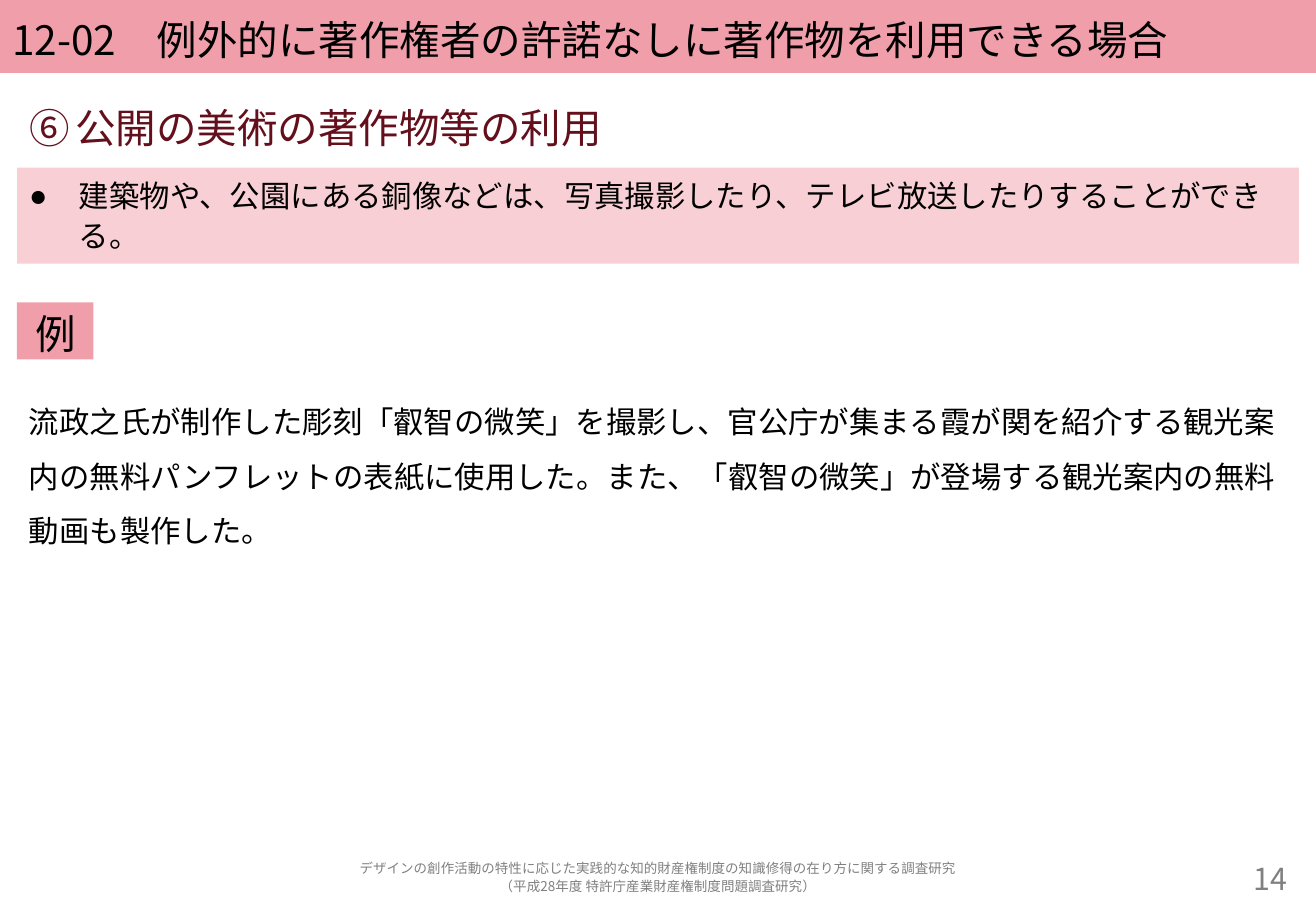
from lxml.etree import SubElement
from pptx import Presentation
from pptx.dml.color import RGBColor
from pptx.enum.shapes import MSO_SHAPE
from pptx.enum.text import MSO_ANCHOR, MSO_AUTO_SIZE, PP_ALIGN
from pptx.oxml.ns import qn
from pptx.util import Inches, Pt

FONT = "Noto Sans CJK JP"
HUES = {
    "rose": "F09FAA",
    "pale": "F8CFD5",
    "wine": "64101C",
    "gray": "808080",
    "black": "000000",
}
LEFT, WIDE = 0.14, 10.55


def write(shape, text, box, size=18, hue="black", fill=None, align=PP_ALIGN.LEFT,
          anchor=MSO_ANCHOR.MIDDLE, lead=1.1, hang=0, mark=None):
    shape.left, shape.top, shape.width, shape.height = [Inches(n) for n in box]
    if fill:
        shape.fill.solid()
        shape.fill.fore_color.rgb = RGBColor.from_string(HUES[fill])
        shape.line.fill.background()
    frame = shape.text_frame
    frame.text = text
    frame.word_wrap = True
    frame.auto_size = MSO_AUTO_SIZE.NONE
    frame.vertical_anchor = anchor
    for para in frame.paragraphs:
        para.alignment = align
        para.line_spacing = lead
        if mark:
            tag, attrs = mark
            props = para._p.get_or_add_pPr()
            props.set("marL", str(Inches(hang)))
            props.set("indent", str(-Inches(hang)))
            SubElement(props, qn(tag), attrs)
        for run in para.runs:
            run.font.size = Pt(size)
            run.font.name = FONT
            run.font.color.rgb = RGBColor.from_string(HUES[hue])
            SubElement(run._r.get_or_add_rPr(), qn("a:ea"), typeface=FONT)


deck = Presentation()
deck.slide_width = Inches(10.83)
deck.slide_height = Inches(7.5)
slide = deck.slides.add_slide(deck.slide_layouts[3])
shapes = slide.shapes
title, rule, topic = slide.placeholders

write(title, "12-02\u3000例外的に著作権者の許諾なしに著作物を利用できる場合".replace("\u3000", "　"),
      (0, 0, 10.83, 0.6), size=24, fill="rose")
write(rule, "建築物や、公園にある銅像などは、写真撮影したり、テレビ放送したりすることができる。",
      (LEFT, 1.38, WIDE, 0.79), fill="pale", anchor=MSO_ANCHOR.TOP,
      hang=0.41, mark=("a:buChar", {"char": "●"}))
write(topic, "公開の美術の著作物等の利用", (LEFT, 0.76, WIDE, 0.47), size=24, hue="wine",
      anchor=MSO_ANCHOR.TOP, hang=0.38,
      mark=("a:buAutoNum", {"type": "circleNumDbPlain", "startAt": "6"}))

label = shapes.add_shape(MSO_SHAPE.RECTANGLE, 0, 0, 0, 0)
label.shadow.inherit = False
write(label, "例", (LEFT, 2.49, 0.63, 0.47), size=24, fill="rose", align=PP_ALIGN.CENTER)

case, foot, page = [shapes.add_textbox(0, 0, 0, 0) for _ in range(3)]
write(case, "流政之氏が制作した彫刻「叡智の微笑」を撮影し、官公庁が集まる霞が関を紹介する"
      "観光案内の無料パンフレットの表紙に使用した。また、「叡智の微笑」が登場する"
      "観光案内の無料動画も製作した。",
      (LEFT, 3.12, WIDE, 3.78), anchor=MSO_ANCHOR.TOP, lead=1.5)
write(foot, "デザインの創作活動の特性に応じた実践的な知的財産権制度の知識修得の在り方に関する調査研究\n"
      "（平成28年度 特許庁産業財産権制度問題調査研究）",
      (LEFT, 7.06, WIDE, 0.31), size=8, hue="gray", align=PP_ALIGN.CENTER)
write(page, "14", (9.35, 7.06, 1.34, 0.31), hue="gray", align=PP_ALIGN.RIGHT)

deck.save("out.pptx")
